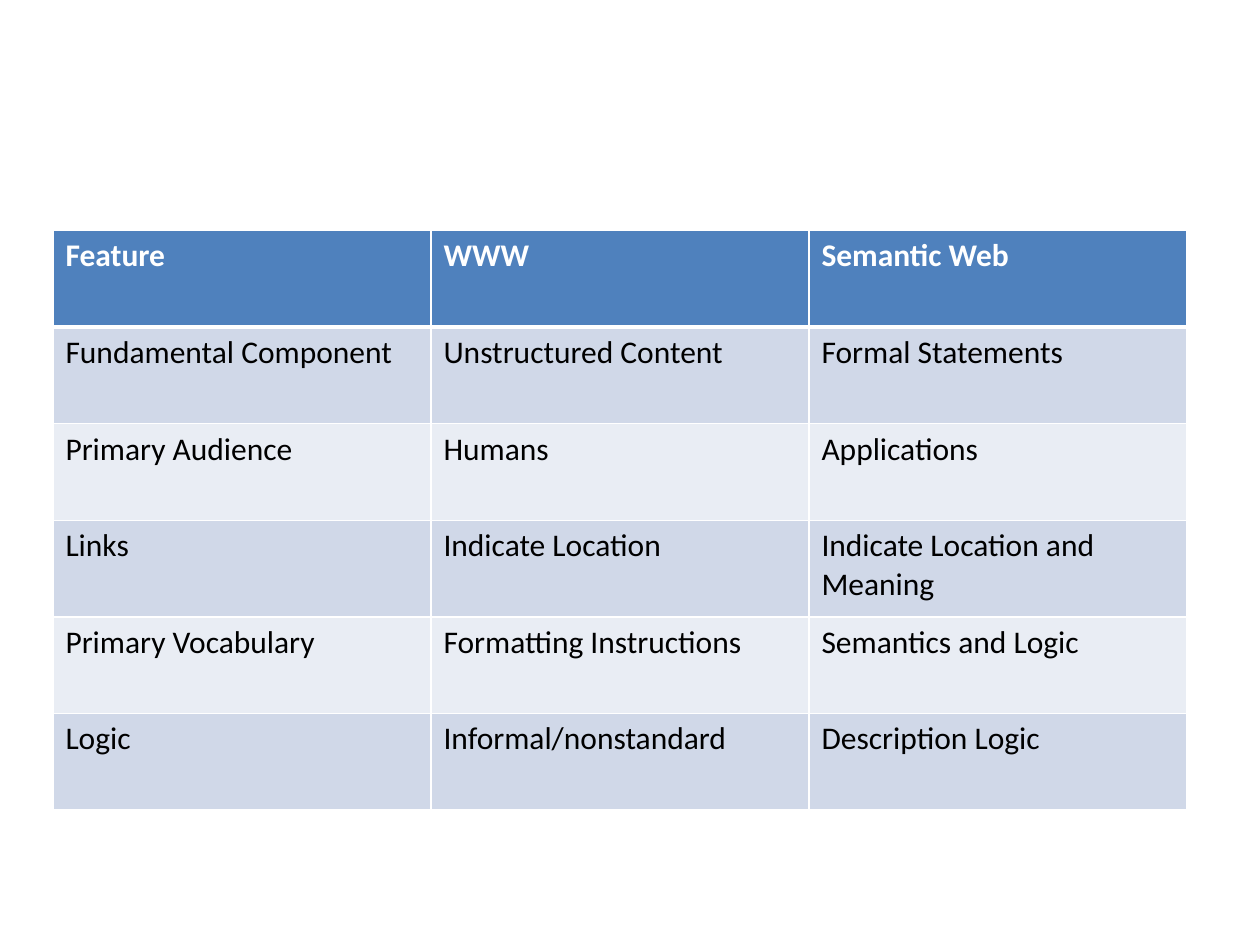
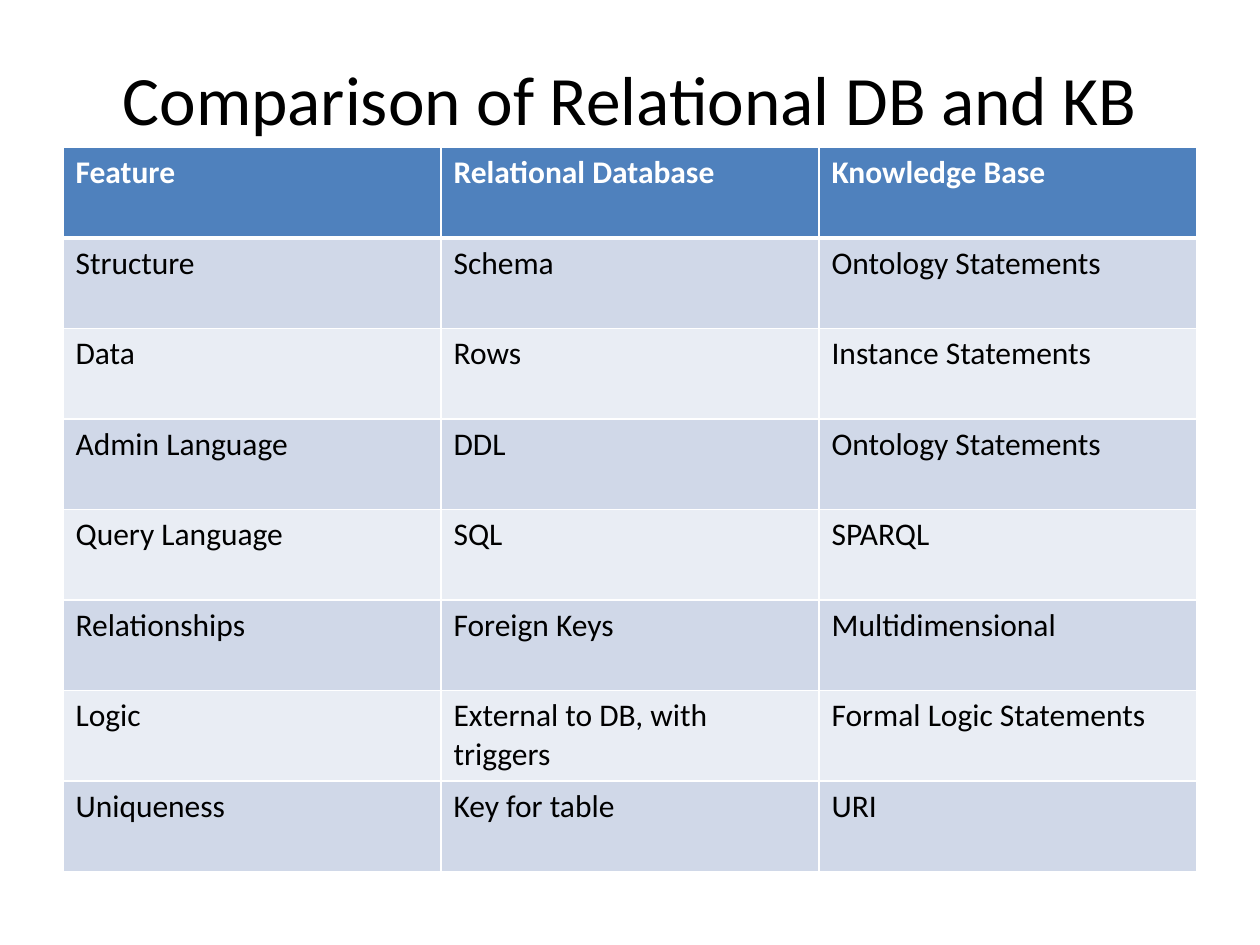
"""Build two comparison-table slides about the Semantic Web and knowledge bases."""
import pptx
import pptx.dml.color
import pptx.enum.text
import pptx.oxml
import pptx.oxml.ns
import pptx.util

Inches = pptx.util.Inches
Pt = pptx.util.Pt
RGBColor = pptx.dml.color.RGBColor

WHITE = RGBColor(0xFF, 0xFF, 0xFF)
BLACK = RGBColor(0x00, 0x00, 0x00)
HEADER_BLUE = RGBColor(0x4F, 0x81, 0xBD)
DARK_BAND = RGBColor(0xD0, 0xD8, 0xE8)
LIGHT_BAND = RGBColor(0xE9, 0xED, 0xF4)
FONT = "Calibri"
COLUMN_WIDTH = 3

WEB_ROWS = [
    ("Feature", "WWW", "Semantic Web"),
    ("Fundamental Component", "Unstructured Content", "Formal Statements"),
    ("Primary Audience", "Humans", "Applications"),
    ("Links", "Indicate Location", "Indicate Location and Meaning"),
    ("Primary Vocabulary", "Formatting Instructions", "Semantics and Logic"),
    ("Logic", "Informal/nonstandard", "Description Logic"),
]
DATABASE_ROWS = [
    ("Feature", "Relational Database", "Knowledge Base"),
    ("Structure", "Schema", "Ontology Statements"),
    ("Data", "Rows", "Instance Statements"),
    ("Admin Language", "DDL", "Ontology Statements"),
    ("Query Language", "SQL", "SPARQL"),
    ("Relationships", "Foreign Keys", "Multidimensional"),
    ("Logic", "External to DB, with triggers", "Formal Logic Statements"),
    ("Uniqueness", "Key for table", "URI"),
]


def set_border(cell, side, points):
    """Draw one white cell border."""
    cell._tc.get_or_add_tcPr().append(pptx.oxml.parse_xml(
        f'<a:ln{side} {pptx.oxml.ns.nsdecls("a")} w="{Pt(points)}">'
        f'<a:solidFill><a:srgbClr val="{WHITE}"/></a:solidFill></a:ln{side}>'))


def add_comparison(page, rows, left, top, height):
    """Add a banded table with equal rows and columns."""
    columns = len(rows[0])
    table = page.shapes.add_table(
        len(rows), columns, Inches(left), Inches(top),
        Inches(COLUMN_WIDTH * columns), Inches(height)).table
    for row_index, texts in enumerate(rows):
        is_header = row_index == 0
        band = DARK_BAND if row_index % 2 else LIGHT_BAND
        for column_index, text in enumerate(texts):
            cell = table.cell(row_index, column_index)
            set_border(cell, "L", 1)
            set_border(cell, "R", 1)
            set_border(cell, "T", 3 if row_index == 1 else 1)
            set_border(cell, "B", 3 if is_header else 1)
            cell.fill.solid()
            cell.fill.fore_color.rgb = HEADER_BLUE if is_header else band
            cell.text = text
            font = cell.text_frame.paragraphs[0].font
            font.name = FONT
            font.size = Pt(18)
            font.bold = is_header
            font.color.rgb = WHITE if is_header else BLACK


deck = pptx.Presentation()
deck.slide_width = Inches(10)
deck.slide_height = Inches(7.5)
blank = deck.slide_layouts[6]

web_page = deck.slides.add_slide(blank)
add_comparison(web_page, WEB_ROWS, 0.42, 1.83, 4.6)

database_page = deck.slides.add_slide(blank)
title_box = database_page.shapes.add_textbox(Inches(0.5), Inches(0.3), Inches(9), Inches(0.95))
title_box.text_frame.word_wrap = True
title_box.text_frame.vertical_anchor = pptx.enum.text.MSO_ANCHOR.MIDDLE
title = title_box.text_frame.paragraphs[0]
title.text = "Comparison of Relational DB and KB"
title.alignment = pptx.enum.text.PP_ALIGN.CENTER
title.font.name = FONT
title.font.size = Pt(39.6)
title.font.color.rgb = BLACK
add_comparison(database_page, DATABASE_ROWS, 0.5, 1.17, 5.75)

deck.save("out.pptx")
